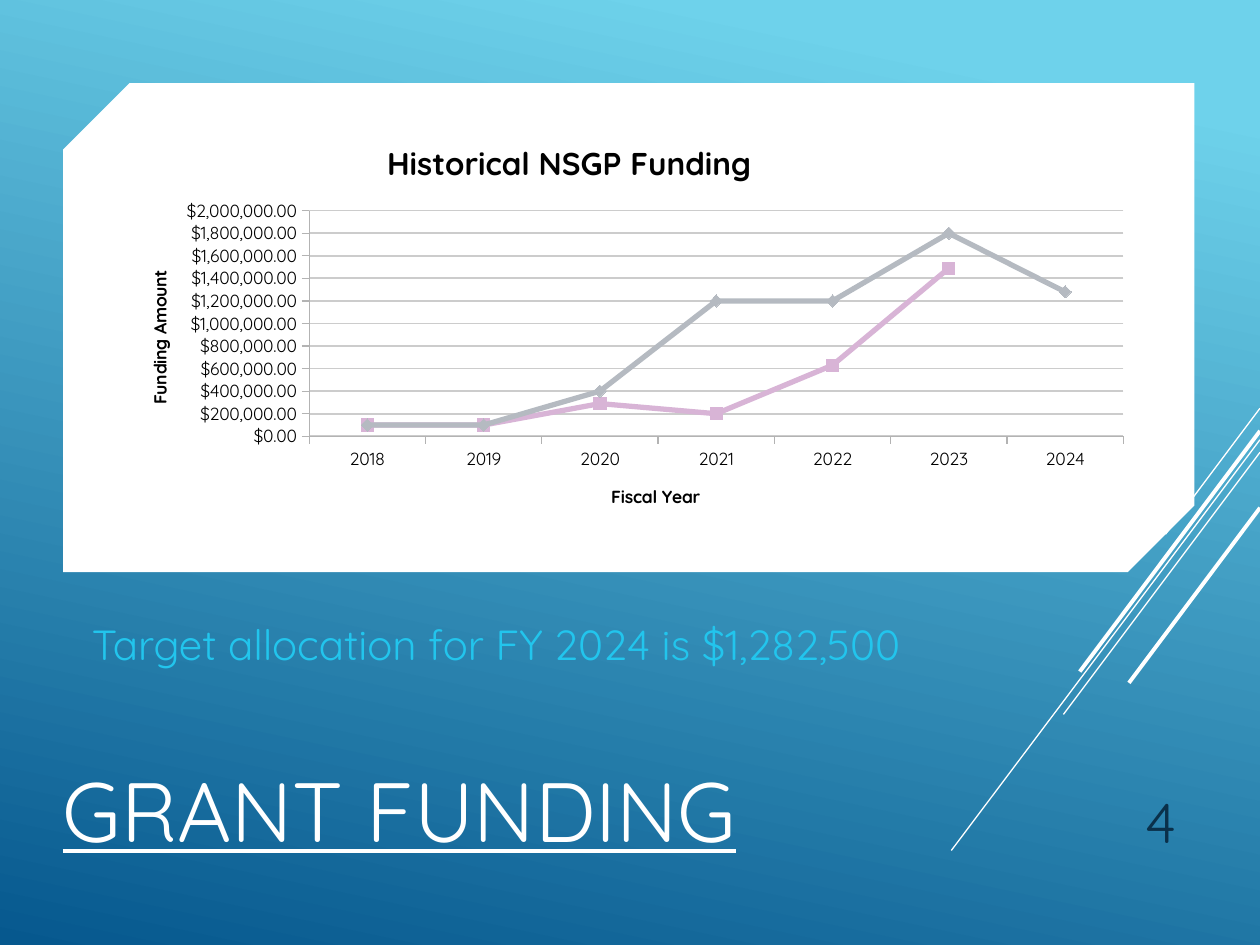
"""Build the grant funding slide with its funding history chart."""
from lxml.etree import SubElement
from pptx import Presentation
from pptx.chart.data import CategoryChartData
from pptx.dml.color import RGBColor
from pptx.enum.chart import XL_CHART_TYPE, XL_MARKER_STYLE, XL_TICK_MARK
from pptx.enum.shapes import MSO_CONNECTOR, MSO_SHAPE
from pptx.enum.text import MSO_ANCHOR, PP_ALIGN
from pptx.oxml import parse_xml
from pptx.oxml.ns import nsdecls, qn
from pptx.util import Inches, Pt

FONT = "Quicksand"
colour = RGBColor.from_string

presentation = Presentation()
presentation.slide_width, presentation.slide_height = Inches(10), Inches(7.5)
slide = presentation.slides.add_slide(presentation.slide_layouts[6])
cell = presentation.slide_width / 100


def grid(*steps):
    """Turn steps of a grid of 100 columns and 75 rows into lengths."""
    return [round(step * cell) for step in steps]


def set_layout(element, index, **shares):
    """Place a chart part by shares of the chart's size."""
    for old in element.findall(qn("c:layout")):
        element.remove(old)
    layout = parse_xml(f"<c:layout {nsdecls('c')}><c:manualLayout/></c:layout>")
    manual = layout[0]
    if "w" in shares:
        SubElement(manual, qn("c:layoutTarget")).set("val", "inner")
    for mode in ("xMode", "yMode"):
        SubElement(manual, qn(f"c:{mode}")).set("val", "edge")
    for name, share in shares.items():
        SubElement(manual, qn(f"c:{name}")).set("val", str(share))
    element.insert(index, layout)


backdrop = slide.shapes.add_shape(MSO_SHAPE.RECTANGLE, *grid(0, 0, 100, 75))
backdrop.fill.gradient()
backdrop.fill.gradient_angle = 258
for stop, (position, shade) in zip(
    backdrop.fill.gradient_stops, [(0.1, "6ED2EB"), (1, "06588E")]
):
    stop.position = position
    stop.color.rgb = colour(shade)

panel = slide.shapes.add_shape(
    MSO_SHAPE.SNIP_2_DIAG_RECTANGLE, *grid(5, 6.6, 89.8, 38.8)
)
panel.adjustments[0], panel.adjustments[1] = 0.136, 0
panel.fill.solid()
panel.fill.fore_color.rgb = colour("FFFFFF")
for shape in (backdrop, panel):
    shape.line.fill.background()
    shape.shadow.inherit = False

for start_x, start_y, end_x, end_y, width in [
    (100, 32.4, 92.5, 42.4, 0.75),
    (100, 34.9, 75.5, 67.5, 0.75),
    (100, 35.9, 84.4, 56.7, 0.75),
    (100, 34.2, 85.7, 53.3, 2.25),
    (100, 40.3, 89.6, 54.2, 2.25),
]:
    stripe = slide.shapes.add_connector(
        MSO_CONNECTOR.STRAIGHT, *grid(start_x, start_y, end_x, end_y)
    )
    stripe.line.color.rgb = colour("FFFFFF")
    stripe.line.width = Pt(width)
    SubElement(stripe._element.spPr, qn("a:effectLst"))

chart_data = CategoryChartData(number_format='"$"#,##0.00')
chart_data.categories = [str(year) for year in range(2018, 2025)]
chart_data.add_series(
    "Series 1", [100000, 100000, 290000, 200000, 630000, 1490000, None]
)
chart_data.add_series(
    "Series 2", [100000, 100000, 400000, 1200000, 1200000, 1800000, 1280000]
)
chart = slide.shapes.add_chart(
    XL_CHART_TYPE.LINE_MARKERS, *grid(9, 10, 81.8, 32), chart_data
).chart
chart.has_legend = False
chart.font.name, chart.font.size = FONT, Pt(10)
chart.font.color.rgb = colour("000000")
chart.plots[0].vary_by_categories = False
set_layout(chart._chartSpace.chart.plotArea, 0, x=0.19, y=0.21, w=0.79, h=0.56)

value_axis, category_axis = chart.value_axis, chart.category_axis
value_axis.minimum_scale, value_axis.maximum_scale = 0, 2000000
value_axis.major_unit = 200000
value_axis.has_major_gridlines = True
value_axis.tick_labels.number_format = '"$"#,##0.00'
value_axis.tick_labels.number_format_is_linked = False
for axis in (value_axis, category_axis):
    axis.major_tick_mark = XL_TICK_MARK.OUTSIDE
    axis.format.line.color.rgb = colour("B3B3B3")
gridline = value_axis.major_gridlines.format.line
gridline.color.rgb = colour("CCCCCC")
gridline.width = Pt(1)

for owner, text, size, left, top in [
    (chart, "Historical NSGP Funding", 18, 0.26, 0.02),
    (value_axis, "Funding Amount", 10, 0.03, 0.35),
    (category_axis, "Fiscal Year", 10, 0.48, 0.88),
]:
    title = owner.chart_title if owner is chart else owner.axis_title
    run = title.text_frame.paragraphs[0].add_run()
    run.text = text
    run.font.name, run.font.size, run.font.bold = FONT, Pt(size), True
    run.font.color.rgb = colour("000000")
    set_layout(title._element, 1, x=left, y=top)

for series, line_shade, marker_shade, style, size in zip(
    chart.plots[0].series,
    ("D8B4D6", "B5BAC1"),
    ("C085B8", "808A99"),
    (XL_MARKER_STYLE.SQUARE, XL_MARKER_STYLE.DIAMOND),
    (7, 7),
):
    series.smooth = False
    series.format.line.color.rgb = colour(line_shade)
    series.format.line.width = Pt(3)
    series.marker.style, series.marker.size = style, size
    series.marker.format.fill.solid()
    series.marker.format.fill.fore_color.rgb = colour(marker_shade)
    series.marker.format.line.fill.background()

for text, box, size, shade, anchor, alignment, underline in [
    ("GRANT FUNDING", (4, 55.2, 84.1, 13.5), 48, "FFFFFF",
     MSO_ANCHOR.BOTTOM, PP_ALIGN.LEFT, True),
    ("4", (85, 61, 9.4, 7.3), 32, "0A304A",
     MSO_ANCHOR.BOTTOM, PP_ALIGN.RIGHT, False),
    ("Target allocation for FY 2024 is $1,282,500", (6.3, 48.6, 77.5, 5), 24,
     "22C5ED", MSO_ANCHOR.TOP, PP_ALIGN.LEFT, False),
]:
    frame = slide.shapes.add_textbox(*grid(*box)).text_frame
    frame.word_wrap = True
    frame.vertical_anchor = anchor
    paragraph = frame.paragraphs[0]
    paragraph.alignment = alignment
    run = paragraph.add_run()
    run.text = text
    run.font.name, run.font.size = FONT, Pt(size)
    run.font.underline = underline
    run.font.color.rgb = colour(shade)

presentation.save("out.pptx")
